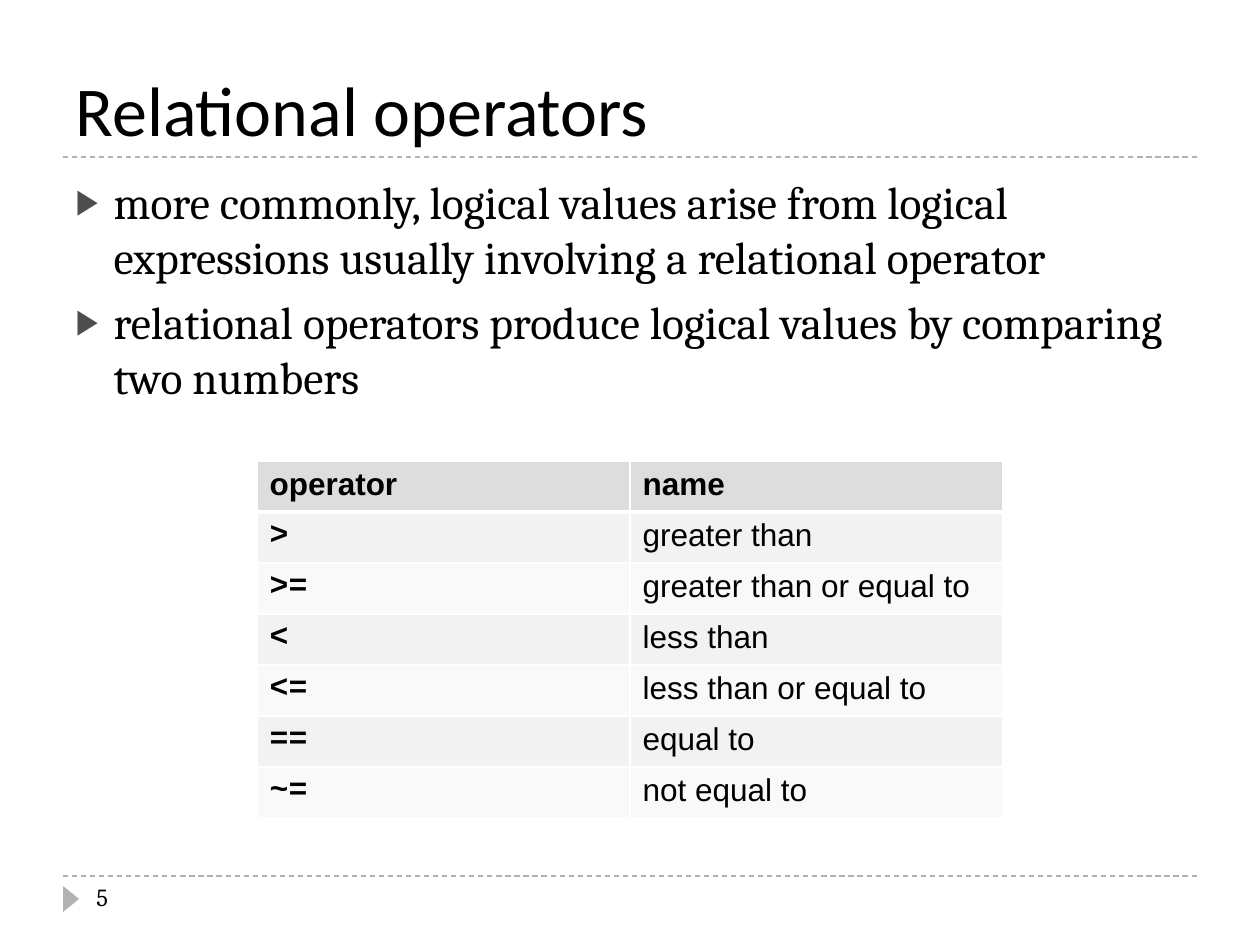
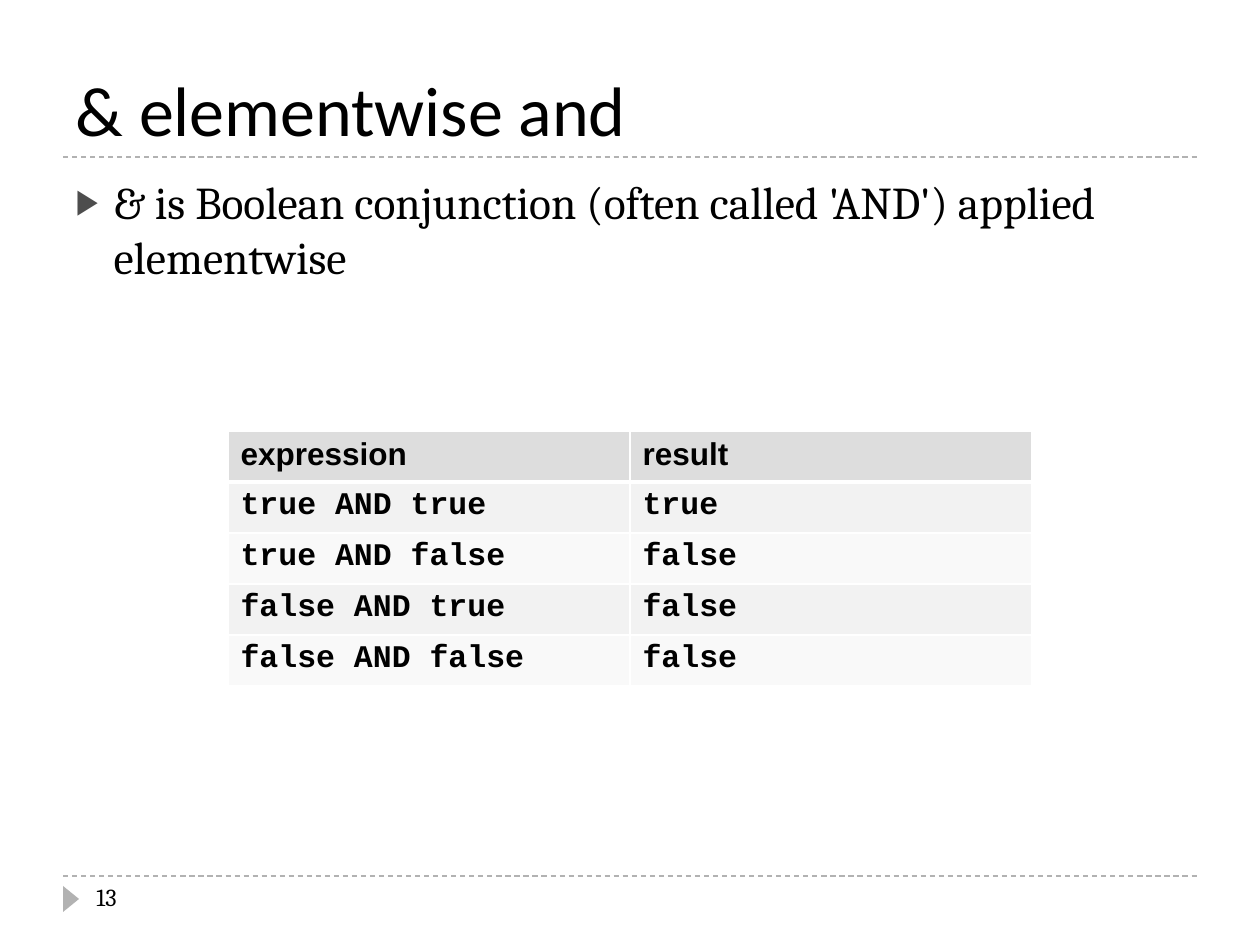
from lxml import etree
from pptx import Presentation
from pptx.dml.color import RGBColor
from pptx.enum.dml import MSO_LINE
from pptx.enum.shapes import MSO_CONNECTOR, MSO_SHAPE
from pptx.enum.text import MSO_ANCHOR, MSO_AUTO_SIZE, PP_ALIGN
from pptx.oxml.ns import qn
from pptx.util import Emu, Pt

SLIDES = [
    {
        "title": "Relational operators",
        "bullets": [
            "more commonly, logical values arise from logical expressions "
            "usually involving a relational operator",
            "relational operators produce logical values by comparing two numbers",
        ],
        "number": 5,
        "table": {
            "top": 461,
            "column_width": 373,
            "column_styles": ("code", "plain"),
            "rows": [
                ("operator", "name"),
                (">", "greater than"),
                (">=", "greater than or equal to"),
                ("<", "less than"),
                ("<=", "less than or equal to"),
                ("==", "equal to"),
                ("~=", "not equal to"),
            ],
        },
    },
    {
        "title": "& elementwise and",
        "bullets": ["& is Boolean conjunction (often called 'AND') applied elementwise"],
        "number": 13,
        "table": {
            "top": 431,
            "column_width": 402,
            "column_styles": ("code", "code"),
            "rows": [
                ("expression", "result"),
                ("true AND true", "true"),
                ("true AND false", "false"),
                ("false AND true", "false"),
                ("false AND false", "false"),
            ],
        },
    },
]

PX_PER_INCH = 126
SLIDE_WIDTH, SLIDE_HEIGHT = 1260, 945
MARGIN = 63
CONTENT_WIDTH = SLIDE_WIDTH - 2 * MARGIN
TITLE_BOX = (MARGIN, 21, CONTENT_WIDTH, 136)
BODY_BOX = (MARGIN, 168, CONTENT_WIDTH, 680)
NUMBER_BOX = (84, 876, 274, 50)
MARKER_BOX = (58, 891, 26, 16)
RULE_TOPS = (876, 157)
ROW_HEIGHT = 51
BULLET_INDENT = 38

COLORS = {
    "text": "000000",
    "rule": "B2B2B2",
    "bullet": "4D4D4D",
    "header": "DDDDDD",
    "odd_row": "F2F2F2",
    "even_row": "F9F9F9",
    "border": "FFFFFF",
}
FONTS = {
    "title": {"name": "Calibri", "size": Pt(40), "bold": False},
    "body": {"name": "Cambria", "size": Pt(26), "bold": False},
    "number": {"name": "Cambria", "size": Pt(14), "bold": False},
    "header": {"name": "Arial", "size": Pt(18), "bold": True},
    "code": {"name": "Courier New", "size": Pt(18), "bold": True},
    "plain": {"name": "Arial", "size": Pt(18), "bold": False},
}


def px(length):
    return Emu(round(length * 914400 / PX_PER_INCH))


def rgb(name):
    return RGBColor.from_string(COLORS[name])


def place(shape, box):
    for attribute, length in zip(("left", "top", "width", "height"), box):
        setattr(shape, attribute, px(length))


def write(paragraph, text, style):
    run = paragraph.add_run()
    run.text = text
    for attribute, value in FONTS[style].items():
        setattr(run.font, attribute, value)
    run.font.color.rgb = rgb("text")


def add_frame(slide):
    """Draw the two dashed rules and the marker beside the slide number."""
    for top in RULE_TOPS:
        rule = slide.shapes.add_connector(
            MSO_CONNECTOR.STRAIGHT, px(MARGIN), px(top), px(SLIDE_WIDTH - MARGIN), px(top))
        rule.line.color.rgb = rgb("rule")
        rule.line.width = Pt(0.75)
        rule.line.dash_style = MSO_LINE.DASH
        etree.SubElement(rule._element.spPr, qn("a:effectLst"))
    marker = slide.shapes.add_shape(
        MSO_SHAPE.ISOSCELES_TRIANGLE, *(px(length) for length in MARKER_BOX))
    marker.rotation = 90
    marker.shadow.inherit = False
    marker.fill.solid()
    marker.fill.fore_color.rgb = rgb("rule")
    marker.line.fill.background()


def fill_title(shape, text):
    place(shape, TITLE_BOX)
    frame = shape.text_frame
    frame.auto_size = MSO_AUTO_SIZE.NONE
    frame.vertical_anchor = MSO_ANCHOR.BOTTOM
    frame.paragraphs[0].alignment = PP_ALIGN.LEFT
    write(frame.paragraphs[0], text, "title")


def add_bullet(paragraph):
    properties = paragraph._p.get_or_add_pPr()
    properties.set("marL", str(px(BULLET_INDENT)))
    properties.set("indent", str(-px(BULLET_INDENT)))
    color = etree.SubElement(properties, qn("a:buClr"))
    etree.SubElement(color, qn("a:srgbClr"), val=COLORS["bullet"])
    etree.SubElement(properties, qn("a:buSzPct"), val="76000")
    etree.SubElement(properties, qn("a:buChar"), char="▶")


def fill_body(shape, bullets):
    place(shape, BODY_BOX)
    frame = shape.text_frame
    frame.auto_size = MSO_AUTO_SIZE.NONE
    for index, text in enumerate(bullets):
        paragraph = frame.add_paragraph() if index else frame.paragraphs[0]
        paragraph.space_before = Pt(6)
        add_bullet(paragraph)
        write(paragraph, text, "body")


def add_number(slide, number):
    box = slide.shapes.add_textbox(*(px(length) for length in NUMBER_BOX))
    box.text_frame.word_wrap = True
    write(box.text_frame.paragraphs[0], str(number), "number")


def set_borders(cell, row_index):
    """Give the cell thin borders, with a thick one below the header row."""
    widths = {
        "lnL": 1,
        "lnR": 1,
        "lnT": 3 if row_index == 1 else 1,
        "lnB": 3 if row_index == 0 else 1,
    }
    properties = cell._tc.get_or_add_tcPr()
    for side, width in widths.items():
        line = etree.SubElement(properties, qn(f"a:{side}"), w=str(Pt(width)))
        fill = etree.SubElement(line, qn("a:solidFill"))
        etree.SubElement(fill, qn("a:srgbClr"), val=COLORS["border"])


def add_table(slide, top, column_width, column_styles, rows):
    column_count = len(column_styles)
    width = column_count * column_width
    left = (SLIDE_WIDTH - width) // 2
    table = slide.shapes.add_table(
        len(rows), column_count, px(left), px(top),
        px(width), px(len(rows) * ROW_HEIGHT)).table
    table.horz_banding = False
    for row_index, texts in enumerate(rows):
        if row_index == 0:
            color, styles = "header", ["header"] * column_count
        else:
            color = "odd_row" if row_index % 2 else "even_row"
            styles = column_styles
        for column_index, (text, style) in enumerate(zip(texts, styles)):
            cell = table.cell(row_index, column_index)
            set_borders(cell, row_index)
            cell.fill.solid()
            cell.fill.fore_color.rgb = rgb(color)
            write(cell.text_frame.paragraphs[0], text, style)


def main():
    presentation = Presentation()
    presentation.slide_width = px(SLIDE_WIDTH)
    presentation.slide_height = px(SLIDE_HEIGHT)
    layout = presentation.slide_layouts[1]
    for content in SLIDES:
        slide = presentation.slides.add_slide(layout)
        add_frame(slide)
        fill_title(slide.shapes.title, content["title"])
        fill_body(slide.placeholders[1], content["bullets"])
        add_number(slide, content["number"])
        add_table(slide, **content["table"])
    presentation.save("out.pptx")


if __name__ == "__main__":
    main()
